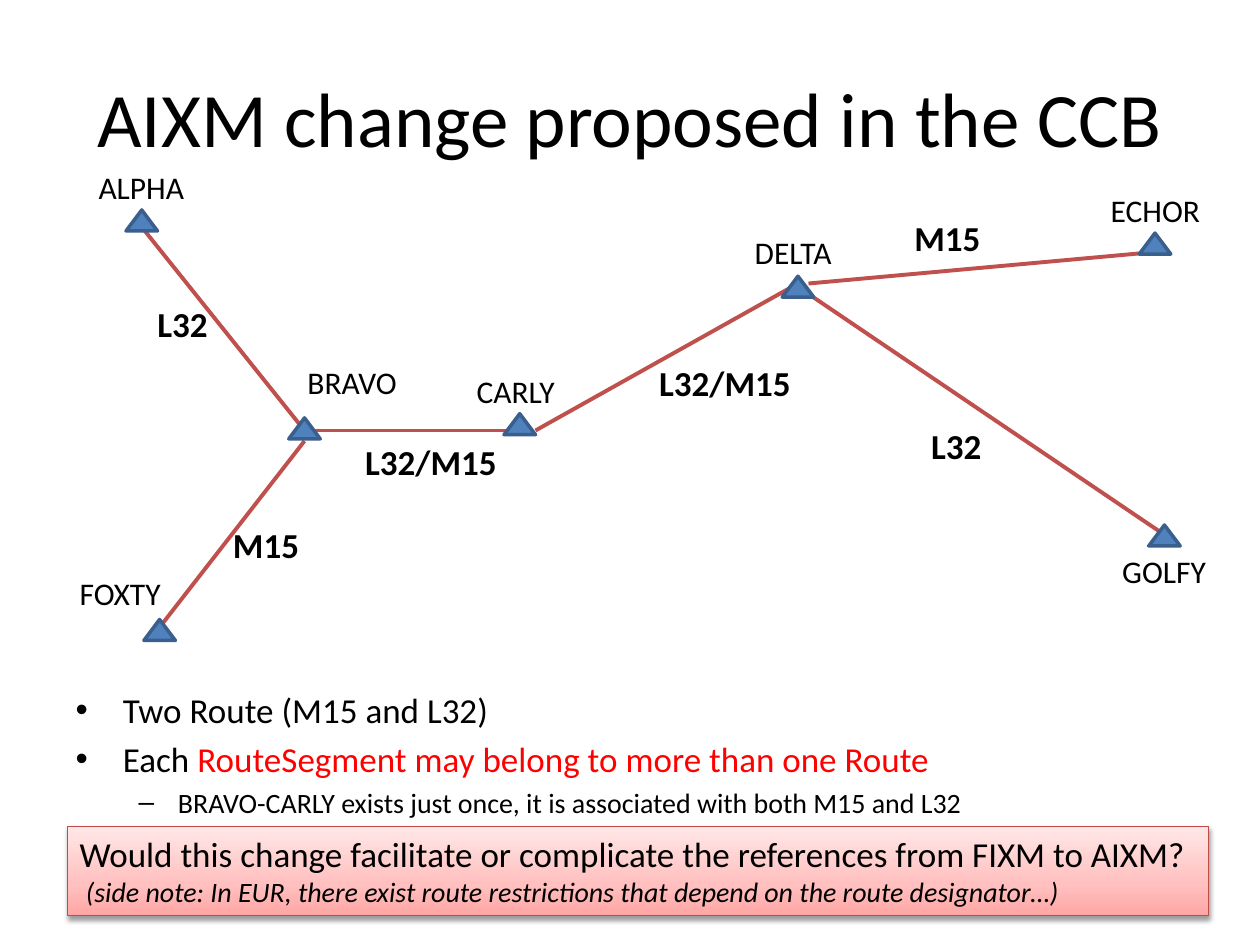
from copy import deepcopy
from lxml.etree import SubElement
from pptx import Presentation
from pptx.dml.color import RGBColor
from pptx.enum.shapes import MSO_CONNECTOR, MSO_SHAPE
from pptx.enum.text import MSO_ANCHOR, MSO_AUTO_SIZE, PP_ALIGN
from pptx.oxml.ns import qn
from pptx.util import Inches, Pt


def paint(color_format, value):
    color_format.rgb = RGBColor.from_string(value)


def write(para, text, size, color="000000", **extras):
    span = para.add_run()
    span.text = text
    formats = {"name": "Calibri", "size": Pt(size), **extras}
    for attribute, value in formats.items():
        setattr(span.font, attribute, value)
    paint(span.font.color, color)


deck = Presentation()
deck.slide_width, deck.slide_height = Inches(10), Inches(7.5)
column, row = deck.slide_width / 120, deck.slide_height / 90
page = deck.slides.add_slide(deck.slide_layouts[1])

title, body = page.placeholders
for holder, top, height in [(title, 3.6, 15), (body, 65, 22)]:
    frame = {"left": 6 * column, "top": top * row,
             "width": 108 * column, "height": height * row}
    for attribute, value in frame.items():
        setattr(holder, attribute, int(value))
    holder.text_frame.auto_size = MSO_AUTO_SIZE.NONE

title.text_frame.vertical_anchor = MSO_ANCHOR.MIDDLE
title.text_frame.paragraphs[0].alignment = PP_ALIGN.CENTER
write(title.text_frame.paragraphs[0], "AIXM change proposed in the CCB", 44)

bullets = [
    (0, 20, [("Two Route (M15 and L32)", "000000")]),
    (0, 20, [("Each ", "000000"),
             ("RouteSegment may belong to more than one Route", "FF0000")]),
    (1, 16, [("BRAVO-CARLY exists just once, it is associated with both M15 and L32",
              "000000")]),
]
for index, (level, size, spans) in enumerate(bullets):
    para = body.text_frame.add_paragraph() if index else body.text_frame.paragraphs[0]
    para.level = level
    for text, color in spans:
        write(para, text, size, color)

segments = [
    (15, 60, 29, 42),
    (13, 21, 29, 41),
    (30, 41, 49, 41),
    (51, 41, 76, 27),
    (77, 27, 110, 24),
    (77, 28, 111, 51),
]
for start_x, start_y, end_x, end_y in segments:
    segment = page.shapes.add_connector(
        MSO_CONNECTOR.STRAIGHT, int(start_x * column), int(start_y * row),
        int(end_x * column), int(end_y * row))
    segment.line.width = Pt(2.25)
    paint(segment.line.color, "C0504D")
    SubElement(segment._element.spPr, qn("a:effectLst"))

for left, top in [(12, 20), (27.5, 39.8), (48, 39.4), (74.5, 26.3),
                  (108.5, 22.2), (13.7, 59), (109.4, 50)]:
    waypoint = page.shapes.add_shape(
        MSO_SHAPE.FLOWCHART_EXTRACT, int(left * column), int(top * row),
        int(3 * column), int(2 * row))
    waypoint.shadow.inherit = False
    waypoint.fill.solid()
    paint(waypoint.fill.fore_color, "4F81BD")
    waypoint.line.width = Pt(2)
    paint(waypoint.line.color, "3A5F8C")

point_names = [
    ("ALPHA", 8.2, 15.4, 10.7),
    ("BRAVO", 28.1, 34, 11),
    ("CARLY", 44.2, 34.8, 10),
    ("DELTA", 70.7, 21.6, 9.8),
    ("ECHOR", 104.6, 17.6, 11),
    ("FOXTY", 6.4, 54.1, 10.2),
    ("GOLFY", 105.7, 52, 10.4),
]
route_names = [
    ("L32", 13.8, 28.2, 7.2),
    ("M15", 21, 49.3, 8.8),
    ("L32/M15", 33.6, 41.4, 15.1),
    ("L32/M15", 61.6, 33.8, 15.1),
    ("M15", 85.9, 20, 8.8),
    ("L32", 87.5, 39.8, 7.3),
]
for names, size, bold, height in [(point_names, 18, False, 4.8),
                                  (route_names, 20, True, 5.3)]:
    for text, left, top, width in names:
        label = page.shapes.add_textbox(
            int(left * column), int(top * row), int(width * column), int(height * row))
        label.text_frame.word_wrap = False
        label.text_frame.auto_size = MSO_AUTO_SIZE.SHAPE_TO_FIT_TEXT
        write(label.text_frame.paragraphs[0], text, size, bold=bold)

question = page.shapes.add_shape(
    MSO_SHAPE.RECTANGLE, int(6.4 * column), int(78.7 * row),
    int(108.7 * column), int(8.5 * row))
question.fill.gradient()
question.fill.gradient_angle = 90
stop_list = question._element.spPr.find(".//" + qn("a:gsLst"))
stop_list.append(deepcopy(stop_list[1]))
stops = [(0, "FFA6A5"), (0.35, "FFC0BF"), (1, "FFE7E7")]
for stop, (position, color) in zip(question.fill.gradient_stops, stops):
    stop.position = position
    paint(stop.color, color)
question.line.width = Pt(0.75)
paint(question.line.color, "BF4C48")

question.shadow.inherit = False
effects = question._element.spPr.find(qn("a:effectLst"))
shadow = SubElement(effects, qn("a:outerShdw"), blurRad=str(Pt(3.1)),
                    dist=str(Pt(1.6)), dir="5400000", rotWithShape="0")
shade = SubElement(shadow, qn("a:srgbClr"), val="000000")
SubElement(shade, qn("a:alpha"), val="38000")

question.text_frame.word_wrap = True
question.text_frame.auto_size = MSO_AUTO_SIZE.SHAPE_TO_FIT_TEXT
question.text_frame.vertical_anchor = MSO_ANCHOR.TOP
lines = [
    ("Would this change facilitate or complicate the references from FIXM to AIXM?",
     20, False),
    (" (side note: In EUR, there exist route restrictions that depend on the route designator…)",
     16, True),
]
for index, (text, size, italic) in enumerate(lines):
    frame = question.text_frame
    para = frame.add_paragraph() if index else frame.paragraphs[0]
    para.alignment = PP_ALIGN.LEFT
    write(para, text, size, italic=italic)

deck.save("out.pptx")
